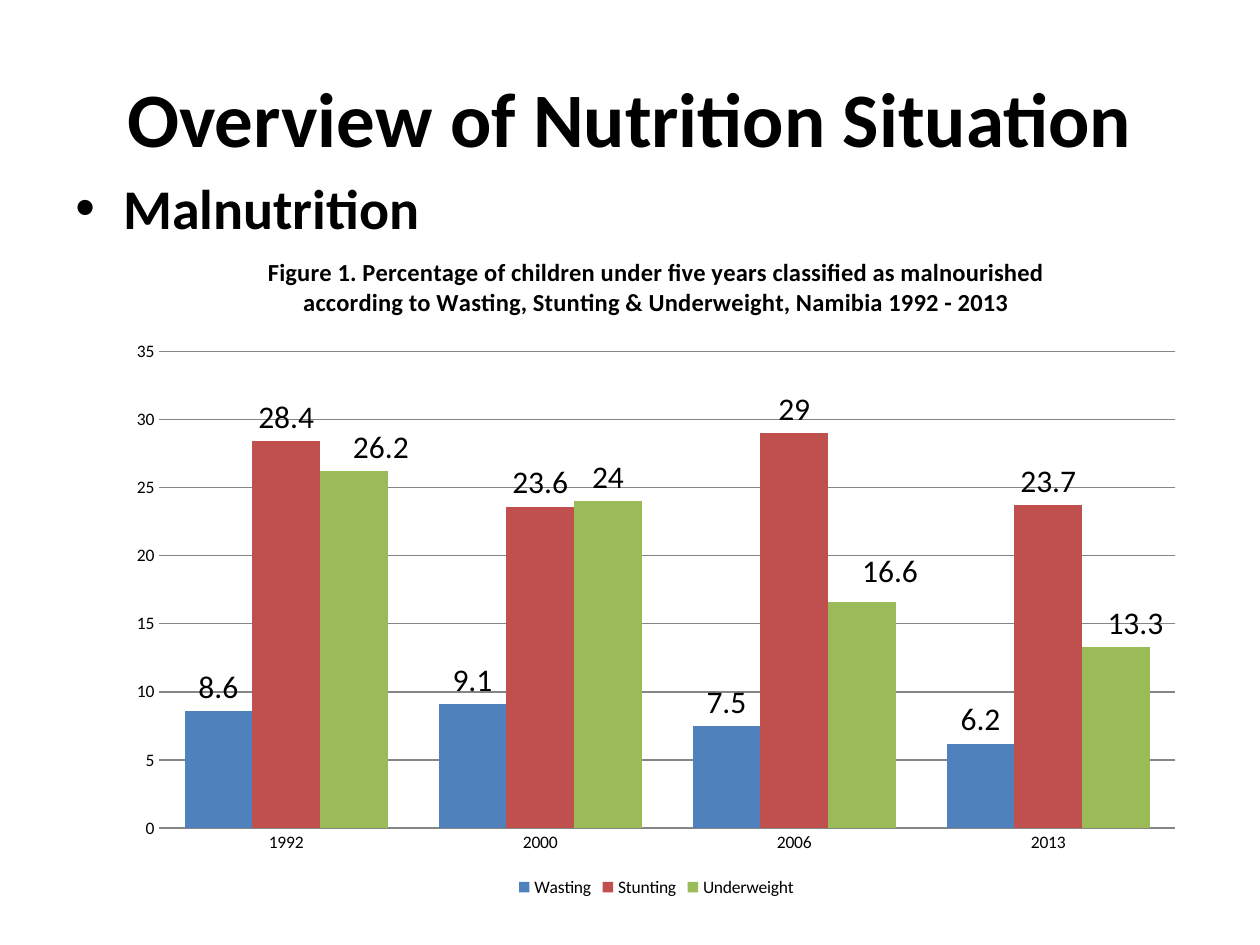
from lxml import etree
from pptx import Presentation
from pptx.chart.data import CategoryChartData
from pptx.dml.color import RGBColor
from pptx.enum.chart import XL_CHART_TYPE as ChartType
from pptx.enum.chart import XL_LABEL_POSITION as LabelPosition
from pptx.enum.chart import XL_LEGEND_POSITION as LegendPosition
from pptx.enum.chart import XL_TICK_MARK as TickMark
from pptx.enum.text import MSO_ANCHOR as Anchor
from pptx.enum.text import PP_ALIGN as Align
from pptx.oxml import parse_xml
from pptx.oxml.ns import nsdecls, qn
from pptx.util import Inches, Pt

BLACK = RGBColor(0x00, 0x00, 0x00)
GRAY = RGBColor(0x86, 0x86, 0x86)
BLUE = RGBColor(0x4F, 0x81, 0xBD)
RED = RGBColor(0xC0, 0x50, 0x4D)
GREEN = RGBColor(0x9B, 0xBB, 0x59)


def format_font(font, size, bold=False):
    values = {"name": "Calibri", "size": Pt(size), "bold": bold}
    for name, value in values.items():
        setattr(font, name, value)
    font.color.rgb = BLACK


def make_layout(**values):
    items = "".join(f'<c:{name} val="{value}"/>' for name, value in values.items())
    return parse_xml(
        f'<c:layout {nsdecls("c")}><c:manualLayout>{items}</c:manualLayout></c:layout>'
    )


presentation = Presentation()
presentation.slide_width = Inches(10)
presentation.slide_height = Inches(7.5)
slide = presentation.slides.add_slide(presentation.slide_layouts[6])

texts = [
    ("Overview of Nutrition Situation", 0.3, 1.25, 44, Anchor.MIDDLE, Align.CENTER),
    ("Malnutrition", 1.33, 5.37, 32, Anchor.TOP, Align.LEFT),
]
for text, top, height, size, anchor, alignment in texts:
    shape = slide.shapes.add_textbox(Inches(0.5), Inches(top), Inches(9), Inches(height))
    frame = shape.text_frame
    frame.word_wrap = True
    frame.vertical_anchor = anchor
    paragraph = frame.paragraphs[0]
    paragraph.alignment = alignment
    run = paragraph.add_run()
    run.text = text
    format_font(run.font, size, True)

properties = paragraph._p.get_or_add_pPr()
properties.set("marL", str(Inches(0.38)))
properties.set("indent", str(Inches(-0.38)))
spacing = etree.SubElement(properties, qn("a:spcBef"))
etree.SubElement(spacing, qn("a:spcPct")).set("val", "20000")
etree.SubElement(properties, qn("a:buFont")).set("typeface", "Arial")
etree.SubElement(properties, qn("a:buChar")).set("char", "•")

series_rows = [
    ("Wasting", BLUE, (8.6, 9.1, 7.5, 6.2)),
    ("Stunting", RED, (28.4, 23.6, 29, 23.7)),
    ("Underweight", GREEN, (26.2, 24, 16.6, 13.3)),
]
chart_data = CategoryChartData()
chart_data.categories = ["1992", "2000", "2006", "2013"]
for name, color, values in series_rows:
    chart_data.add_series(name, values)
chart = slide.shapes.add_chart(
    ChartType.COLUMN_CLUSTERED,
    Inches(0.92), Inches(1.83), Inches(8.58), Inches(5.33), chart_data,
).chart
format_font(chart.font, 10)

chart.has_title = True
title = chart.chart_title
title.include_in_layout = False
run = title.text_frame.paragraphs[0].add_run()
run.text = (
    "Figure 1. Percentage of children under five years classified as malnourished "
    "according to Wasting, Stunting & Underweight, Namibia 1992 - 2013"
)
format_font(run.font, 14, True)

chart.has_legend = True
chart.legend.position = LegendPosition.BOTTOM
chart.legend.include_in_layout = False

for axis in (chart.category_axis, chart.value_axis):
    axis.major_tick_mark = TickMark.NONE
    axis.minor_tick_mark = TickMark.NONE
    axis.format.line.color.rgb = GRAY
value_axis = chart.value_axis
scale = {"minimum_scale": 0, "maximum_scale": 35, "major_unit": 5}
for name, value in scale.items():
    setattr(value_axis, name, value)
value_axis.format.line.fill.background()
value_axis.major_gridlines.format.line.color.rgb = GRAY

plot = chart.plots[0]
for name, value in {"gap_width": 75, "overlap": 0, "vary_by_categories": False}.items():
    setattr(plot, name, value)
for series, (name, color, values) in zip(plot.series, series_rows):
    series.format.fill.solid()
    series.format.fill.fore_color.rgb = color
    labels = series.data_labels
    labels.show_value = True
    labels.position = LabelPosition.OUTSIDE_END
    format_font(labels.font, 18)

label_shifts = {0: (0.025, 0), 2: (0.026, -0.01), 3: (0.018, 0)}
for index, (x, y) in label_shifts.items():
    label = plot.series[2].points[index].data_label
    format_font(label.font, 18)
    label.position = LabelPosition.OUTSIDE_END
    element = plot.series[2]._element.find(
        f'.//{qn("c:dLbl")}/{qn("c:idx")}[@val="{index}"]'
    )
    element.addnext(make_layout(x=x, y=y))

plot_area = chart._chartSpace.find(f'.//{qn("c:plotArea")}')
for layout in plot_area.findall(qn("c:layout")):
    plot_area.remove(layout)
plot_area.insert(
    0,
    make_layout(layoutTarget="inner", xMode="edge", yMode="edge",
                x=0.04, y=0.18, w=0.94, h=0.71),
)

presentation.save("out.pptx")
